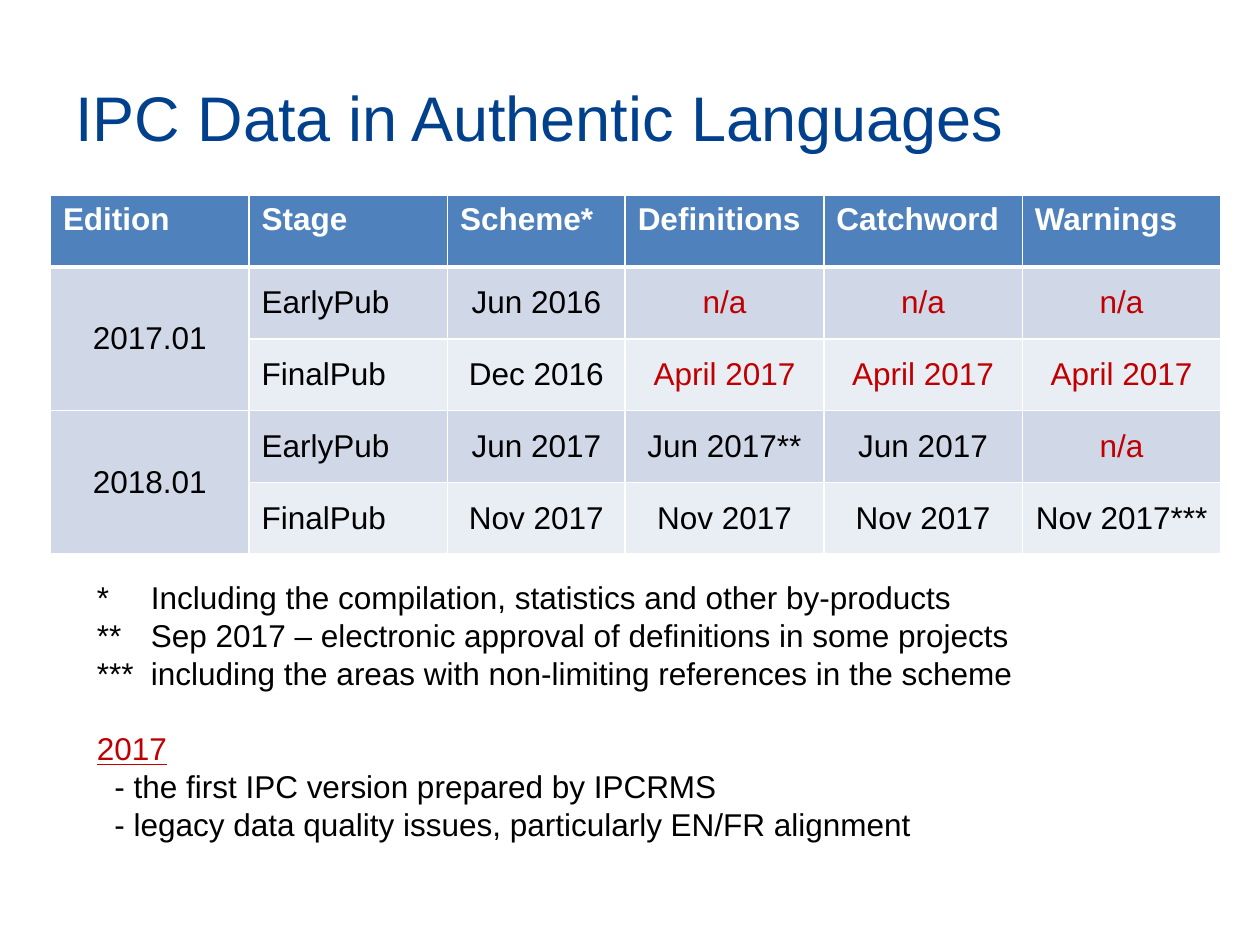
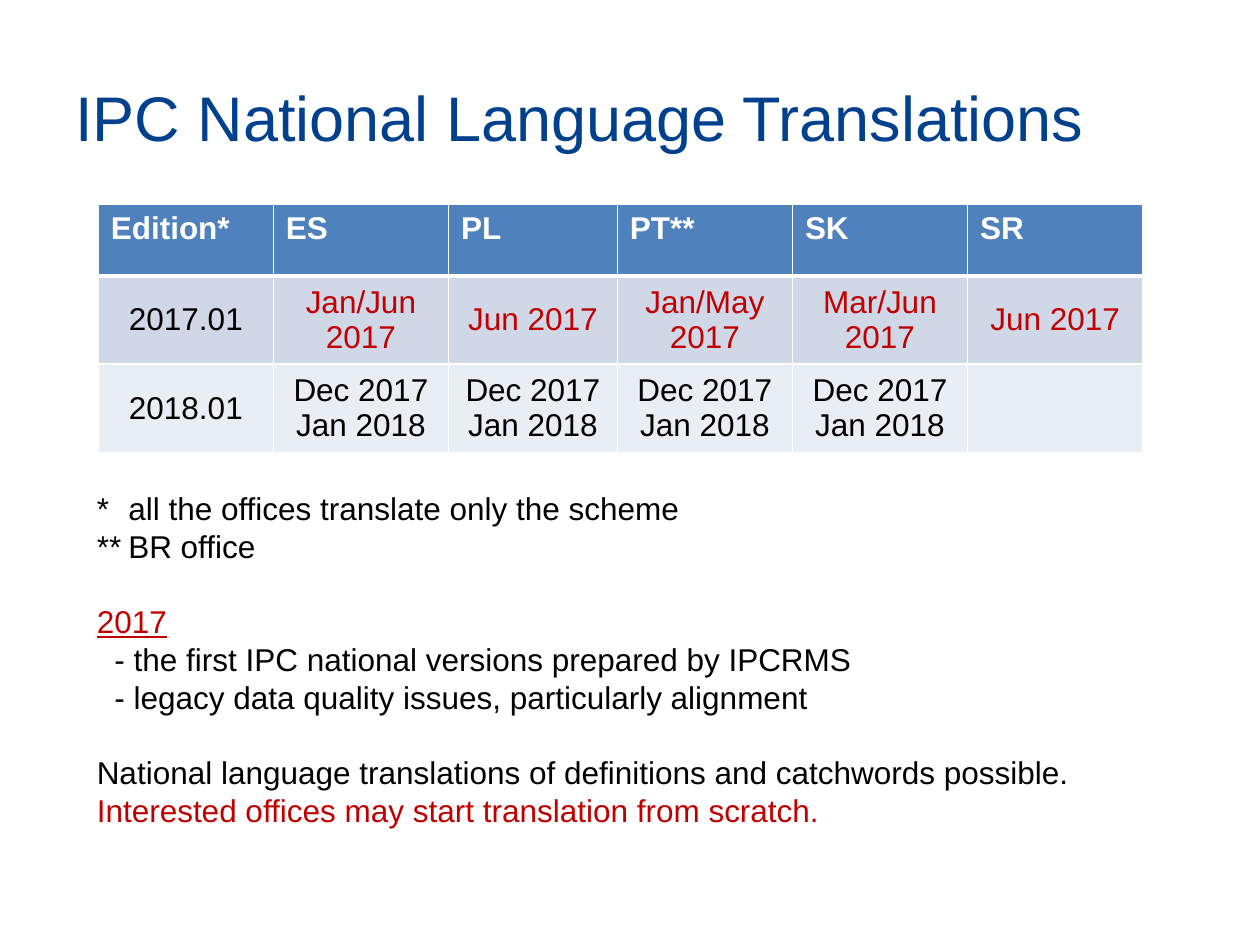
from lxml import etree
from pptx import Presentation
from pptx.dml.color import RGBColor
from pptx.enum.text import MSO_ANCHOR, PP_ALIGN
from pptx.oxml.ns import qn
from pptx.util import Inches, Pt

LEFT, CENTER = PP_ALIGN.LEFT, PP_ALIGN.CENTER
TOP, MIDDLE = MSO_ANCHOR.TOP, MSO_ANCHOR.MIDDLE

FONT = "Arial"
NAVY, BLACK, WHITE, RED = "00408C", "000000", "FFFFFF", "C00000"
HEADER_FILL, DARK_BAND, LIGHT_BAND = "4F81BD", "D0D8E8", "E9EDF4"
ROW_HEIGHT = 0.57
NARROW_COLUMN = 2
LINE_PITCH = 21.6
TITLE_PLACE = (0.5, 0.3, 9, 1.25)

TITLE = {"size": Pt(36), "bold": False}
BODY = {"size": Pt(18), "bold": False}
HEADER = {"size": Pt(18), "bold": True}
HEADING = {"size": Pt(18), "bold": False, "underline": True}

TRANSLATED = "Dec 2017\nJan 2018"

PAGES = [
    {
        "title": "IPC Data in Authentic Languages",
        "table_place": (0.4, 1.55, 9.29),
        "narrow_width": 1.41,
        "tall_row": ROW_HEIGHT,
        "left_columns": {1},
        "red_cells": {"n/a", "April 2017"},
        "rows": [
            ["Edition", "Stage", "Scheme*", "Definitions", "Catchword", "Warnings"],
            ["2017.01", "EarlyPub", "Jun 2016", "n/a", "n/a", "n/a"],
            [None, "FinalPub", "Dec 2016", "April 2017", "April 2017", "April 2017"],
            ["2018.01", "EarlyPub", "Jun 2017", "Jun 2017**", "Jun 2017", "n/a"],
            [None, "FinalPub", "Nov 2017", "Nov 2017", "Nov 2017", "Nov 2017***"],
        ],
        "notes_place": (0.67, 4.54, 8.5, 2.22),
        "note_indent": 0.43,
        "notes": [
            [
                ("note", "*\tIncluding the compilation, statistics and other by-products"),
                ("note", "**\tSep 2017 – electronic approval of definitions in some projects"),
                ("note", "***\tincluding the areas with non-limiting references in the scheme"),
            ],
            [
                ("heading", "2017"),
                ("item", "- the first IPC version prepared by IPCRMS"),
                ("item", "- legacy data quality issues, particularly EN/FR alignment"),
            ],
        ],
    },
    {
        "title": "IPC National Language Translations",
        "table_place": (0.78, 1.62, 8.29),
        "narrow_width": 1.34,
        "tall_row": 0.66,
        "left_columns": set(),
        "red_cells": {"Jan/Jun 2017", "Jun 2017", "Jan/May 2017", "Mar/Jun 2017"},
        "rows": [
            ["Edition*", "ES", "PL", "PT**", "SK", "SR"],
            ["2017.01", "Jan/Jun 2017", "Jun 2017", "Jan/May 2017", "Mar/Jun 2017", "Jun 2017"],
            ["2018.01"] + [TRANSLATED] * 4 + [""],
        ],
        "notes_place": (0.67, 3.83, 8.5, 2.83),
        "note_indent": 0.25,
        "notes": [
            [
                ("note", "*\tall the offices translate only the scheme"),
                ("note", "**\tBR office"),
            ],
            [
                ("heading", "2017"),
                ("item", "- the first IPC national versions prepared by IPCRMS"),
                ("item", "- legacy data quality issues, particularly alignment"),
            ],
            [
                ("plain", "National language translations of definitions and catchwords possible."),
                ("alert", "Interested offices may start translation from scratch."),
            ],
        ],
    },
]


def color(value):
    return RGBColor.from_string(value)


def add_span(para, text, ink, formats):
    span = para.add_run()
    span.text = text
    span.font.name = FONT
    span.font.color.rgb = color(ink)
    for name, value in formats.items():
        setattr(span.font, name, value)


def next_para(frame, index):
    return frame.add_paragraph() if index else frame.paragraphs[0]


def add_box(page, place, anchor):
    box = page.shapes.add_textbox(*map(Inches, place))
    box.text_frame.word_wrap = True
    box.text_frame.vertical_anchor = anchor
    return box.text_frame


def add_title(page, text):
    frame = add_box(page, TITLE_PLACE, MIDDLE)
    add_span(frame.paragraphs[0], text, NAVY, TITLE)


def set_borders(cell, top, bottom):
    properties = cell._tc.get_or_add_tcPr()
    for side, width in (("L", 1), ("R", 1), ("T", top), ("B", bottom)):
        line = etree.SubElement(properties, qn("a:ln" + side), w=str(Pt(width)))
        fill = etree.SubElement(line, qn("a:solidFill"))
        etree.SubElement(fill, qn("a:srgbClr"), val=WHITE)


def fill_cell(cell, text, row, column, content):
    is_header = row == 0
    set_borders(cell, 3 if row == 1 else 1, 3 if is_header else 1)
    band = DARK_BAND if row % 2 else LIGHT_BAND
    cell.fill.solid()
    cell.fill.fore_color.rgb = color(HEADER_FILL if is_header else band)
    cell.vertical_anchor = TOP if is_header else MIDDLE
    if not text:
        return
    ink = WHITE if is_header else RED if text in content["red_cells"] else BLACK
    for index, line in enumerate(text.split("\n")):
        para = next_para(cell.text_frame, index)
        para.alignment = LEFT if is_header or column in content["left_columns"] else CENTER
        add_span(para, line, ink, HEADER if is_header else BODY)


def add_schedule(page, content):
    rows = content["rows"]
    column_count = len(rows[0])
    left, top, width = content["table_place"]
    heights = [ROW_HEIGHT] + [content["tall_row"]] * (len(rows) - 1)
    place = map(Inches, (left, top, width, sum(heights)))
    table = page.shapes.add_table(len(rows), column_count, *place).table
    wide = (width - content["narrow_width"]) / (column_count - 1)
    for index, column in enumerate(table.columns):
        column.width = Inches(content["narrow_width"] if index == NARROW_COLUMN else wide)
    for row, texts in enumerate(rows):
        table.rows[row].height = Inches(heights[row])
        for column, text in enumerate(texts):
            fill_cell(table.cell(row, column), text, row, column, content)
            if text is None:
                table.cell(row - 1, column).merge(table.cell(row, column))


def add_notes(page, content):
    note_indent = content["note_indent"]
    styles = {
        "note": (BLACK, BODY, note_indent, -note_indent),
        "heading": (RED, HEADING, 0, 0),
        "item": (BLACK, BODY, 0.14, 0),
        "plain": (BLACK, BODY, 0, 0),
        "alert": (RED, BODY, 0, 0),
    }
    frame = add_box(page, content["notes_place"], TOP)
    for group_index, group in enumerate(content["notes"]):
        for index, (kind, text) in enumerate(group):
            ink, formats, margin, indent = styles[kind]
            para = next_para(frame, group_index + index)
            properties = para._p.get_or_add_pPr()
            properties.set("marL", str(Inches(margin)))
            properties.set("indent", str(Inches(indent)))
            para.line_spacing = Pt(LINE_PITCH)
            if group_index and index == 0:
                para.space_before = Pt(LINE_PITCH)
            add_span(para, text, ink, formats)


def main():
    deck = Presentation()
    deck.slide_width, deck.slide_height = Inches(10), Inches(7.5)
    for content in PAGES:
        page = deck.slides.add_slide(deck.slide_layouts[6])
        add_title(page, content["title"])
        add_schedule(page, content)
        add_notes(page, content)
    deck.save("out.pptx")


if __name__ == "__main__":
    main()
